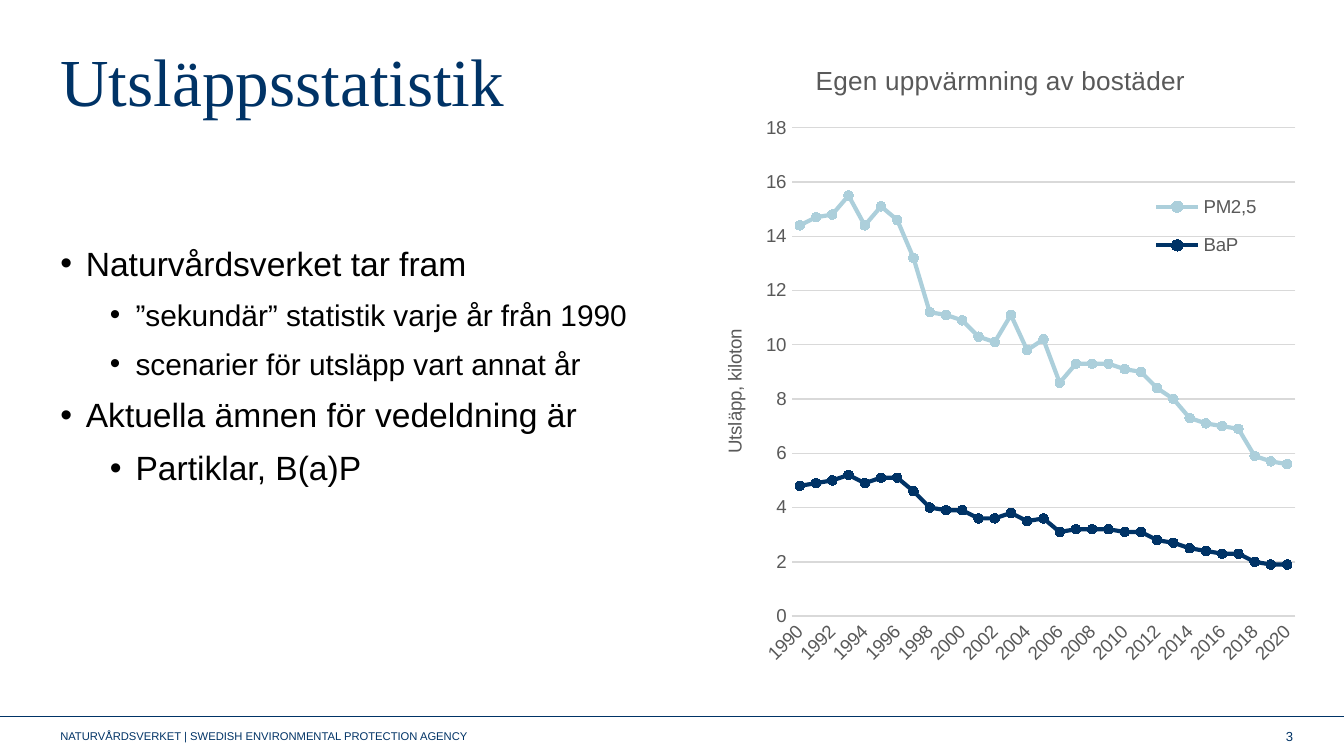
from lxml.etree import SubElement
from pptx import Presentation
from pptx.chart.data import CategoryChartData
from pptx.dml.color import RGBColor
from pptx.enum.chart import XL_CHART_TYPE as ChartType, XL_LEGEND_POSITION as LegendPosition
from pptx.enum.chart import XL_MARKER_STYLE as MarkerStyle, XL_TICK_MARK as TickMark
from pptx.enum.shapes import MSO_CONNECTOR as Connector
from pptx.enum.text import MSO_ANCHOR as Anchor, PP_ALIGN as Align
from pptx.oxml.ns import qn
from pptx.util import Inches, Pt

WIDTH = 10
HEIGHT = WIDTH * 9 / 16
LEFT, TOP, COLUMN = 0.35, 0.29, 4.65
FOOTER_TOP, FOOTER_HEIGHT = 5.33, 0.3
NAVY, GREY, GRID, BLACK = "003366", "595959", "D9D9D9", "000000"

TITLE = "Utsläppsstatistik"
BULLETS = [
    (0, 18, "Naturvårdsverket tar fram"),
    (1, 16, "”sekundär” statistik varje år från 1990"),
    (1, 16, "scenarier för utsläpp vart annat år"),
    (0, 18, "Aktuella ämnen för vedeldning är"),
    (1, 18, "Partiklar, B(a)P"),
]
INDENTS = [0.19, 0.56]
FOOTERS = [
    (LEFT, 3.38, 6, Align.LEFT, "NATURVÅRDSVERKET | SWEDISH ENVIRONMENTAL PROTECTION AGENCY"),
    (7.47, 2.25, 7, Align.RIGHT, "3"),
]
CHART_TITLE = "Egen uppvärmning av bostäder"
AXIS_TITLE = "Utsläpp, kiloton"
YEARS = [str(year) for year in range(1990, 2021)]
SERIES = [
    ("PM2,5", "ACCFDB", [
        14.4, 14.7, 14.8, 15.5, 14.4, 15.1, 14.6, 13.2, 11.2, 11.1, 10.9,
        10.3, 10.1, 11.1, 9.8, 10.2, 8.6, 9.3, 9.3, 9.3, 9.1,
        9, 8.4, 8, 7.3, 7.1, 7, 6.9, 5.9, 5.7, 5.6]),
    ("BaP", NAVY, [
        4.8, 4.9, 5, 5.2, 4.9, 5.1, 5.1, 4.6, 4, 3.9, 3.9,
        3.6, 3.6, 3.8, 3.5, 3.6, 3.1, 3.2, 3.2, 3.2, 3.1,
        3.1, 2.8, 2.7, 2.5, 2.4, 2.3, 2.3, 2, 1.9, 1.9]),
]
PLOT_SHARES = (0.16, 0.14, 0.82, 0.77)
LEGEND_SHARES = (0.74, 0.22, 0.19, 0.15)


def color(value):
    return RGBColor.from_string(value)


def style(font, size, value, name="Arial"):
    font.size, font.name, font.bold = Pt(size), name, False
    font.color.rgb = color(value)


def style_line(line, value, width):
    line.color.rgb = color(value)
    line.width = Pt(width)


def add_text_box(slide, *box):
    text_frame = slide.shapes.add_textbox(*map(Inches, box)).text_frame
    text_frame.word_wrap = True
    return text_frame


def add_bullet(paragraph, indent):
    properties = paragraph._p.get_or_add_pPr()
    properties.set("marL", str(Inches(indent)))
    properties.set("indent", str(-Inches(INDENTS[0])))
    SubElement(properties, qn("a:buFont")).set("typeface", "Arial")
    SubElement(properties, qn("a:buChar")).set("char", "•")


def place(parent, position, shares, inner=False):
    for old in parent.findall(qn("c:layout")):
        parent.remove(old)
    layout = parent.makeelement(qn("c:layout"))
    parent.insert(position, layout)
    manual = SubElement(layout, qn("c:manualLayout"))
    settings = [("layoutTarget", "inner")] if inner else []
    settings += [("xMode", "edge"), ("yMode", "edge")]
    settings += zip("xywh", map(str, shares))
    for tag, value in settings:
        SubElement(manual, qn(f"c:{tag}")).set("val", value)


def add_title(slide):
    title = slide.shapes.title
    title.left, title.top, title.width, title.height = map(Inches, (LEFT, TOP, COLUMN, 1.26))
    title.text_frame.text = TITLE
    title.text_frame.vertical_anchor = Anchor.TOP
    paragraph = title.text_frame.paragraphs[0]
    paragraph.alignment = Align.LEFT
    paragraph.line_spacing = Pt(39.6)
    style(paragraph.runs[0].font, 36, NAVY, "Times New Roman")


def add_body(slide):
    text_frame = add_text_box(slide, LEFT, 1.79, COLUMN, 3.23)
    for index, (level, size, text) in enumerate(BULLETS):
        paragraph = text_frame.add_paragraph() if index else text_frame.paragraphs[0]
        paragraph.text = text
        paragraph.level = level
        paragraph.line_spacing = 0.9
        paragraph.space_before = Pt(3 if index else 0)
        paragraph.space_after = Pt(6)
        add_bullet(paragraph, INDENTS[level])
        style(paragraph.runs[0].font, size, BLACK)


def add_footer(slide):
    y = Inches(FOOTER_TOP)
    rule = slide.shapes.add_connector(Connector.STRAIGHT, 0, y, Inches(WIDTH), y)
    style_line(rule.line, NAVY, 0.4)
    SubElement(rule._element.spPr, qn("a:effectLst"))
    for left, width, size, alignment, text in FOOTERS:
        text_frame = add_text_box(slide, left, FOOTER_TOP, width, FOOTER_HEIGHT)
        text_frame.vertical_anchor = Anchor.MIDDLE
        text_frame.text = text
        text_frame.paragraphs[0].alignment = alignment
        style(text_frame.paragraphs[0].runs[0].font, size, NAVY)


def format_axes(chart):
    for axis in (chart.category_axis, chart.value_axis):
        axis.major_tick_mark = axis.minor_tick_mark = TickMark.NONE
        style(axis.tick_labels.font, 10, GREY)
    categories, values = chart.category_axis, chart.value_axis
    style_line(categories.format.line, GRID, 0.75)
    element = categories._element
    element.find(qn("c:txPr")).find(qn("a:bodyPr")).set("rot", "-2700000")
    skip = element.makeelement(qn("c:tickLblSkip"), {"val": "2"})
    element.find(qn("c:noMultiLvlLbl")).addprevious(skip)

    values.minimum_scale, values.maximum_scale, values.major_unit = 0, 18, 2
    values.tick_labels.number_format = "#,##0"
    values.tick_labels.number_format_is_linked = False
    values.format.line.fill.background()
    style_line(values.major_gridlines.format.line, GRID, 0.75)
    text_frame = values.axis_title.text_frame
    text_frame.text = AXIS_TITLE
    text_frame._txBody.find(qn("a:bodyPr")).set("rot", "-5400000")
    style(text_frame.paragraphs[0].runs[0].font, 10, GREY)


def add_emissions_chart(slide):
    data = CategoryChartData()
    data.categories = YEARS
    for name, _, numbers in SERIES:
        data.add_series(name, numbers)
    box = map(Inches, (5.16, TOP, 4.57, 4.72))
    chart = slide.shapes.add_chart(ChartType.LINE_MARKERS, *box, data).chart
    style(chart.font, 10, BLACK)
    chart.plots[0].vary_by_categories = False
    chart.has_title = True
    chart.chart_title.text_frame.text = CHART_TITLE
    style(chart.chart_title.text_frame.paragraphs[0].runs[0].font, 14, GREY)

    for series, (_, value, _) in zip(chart.plots[0].series, SERIES):
        series.smooth = False
        style_line(series.format.line, value, 2.25)
        marker = series.marker
        marker.style, marker.size = MarkerStyle.CIRCLE, 5
        marker.format.fill.solid()
        marker.format.fill.fore_color.rgb = color(value)
        style_line(marker.format.line, value, 0.75)

    format_axes(chart)
    chart.has_legend = True
    legend = chart.legend
    legend.position = LegendPosition.BOTTOM
    legend.include_in_layout = True
    style(legend.font, 10, GREY)
    place(legend._element, 1, LEGEND_SHARES)
    place(chart._chartSpace.chart.plotArea, 0, PLOT_SHARES, inner=True)


def main():
    presentation = Presentation()
    presentation.slide_width = Inches(WIDTH)
    presentation.slide_height = Inches(HEIGHT)
    slide = presentation.slides.add_slide(presentation.slide_layouts[5])
    add_footer(slide)
    add_body(slide)
    add_title(slide)
    add_emissions_chart(slide)
    presentation.save("out.pptx")


if __name__ == "__main__":
    main()
